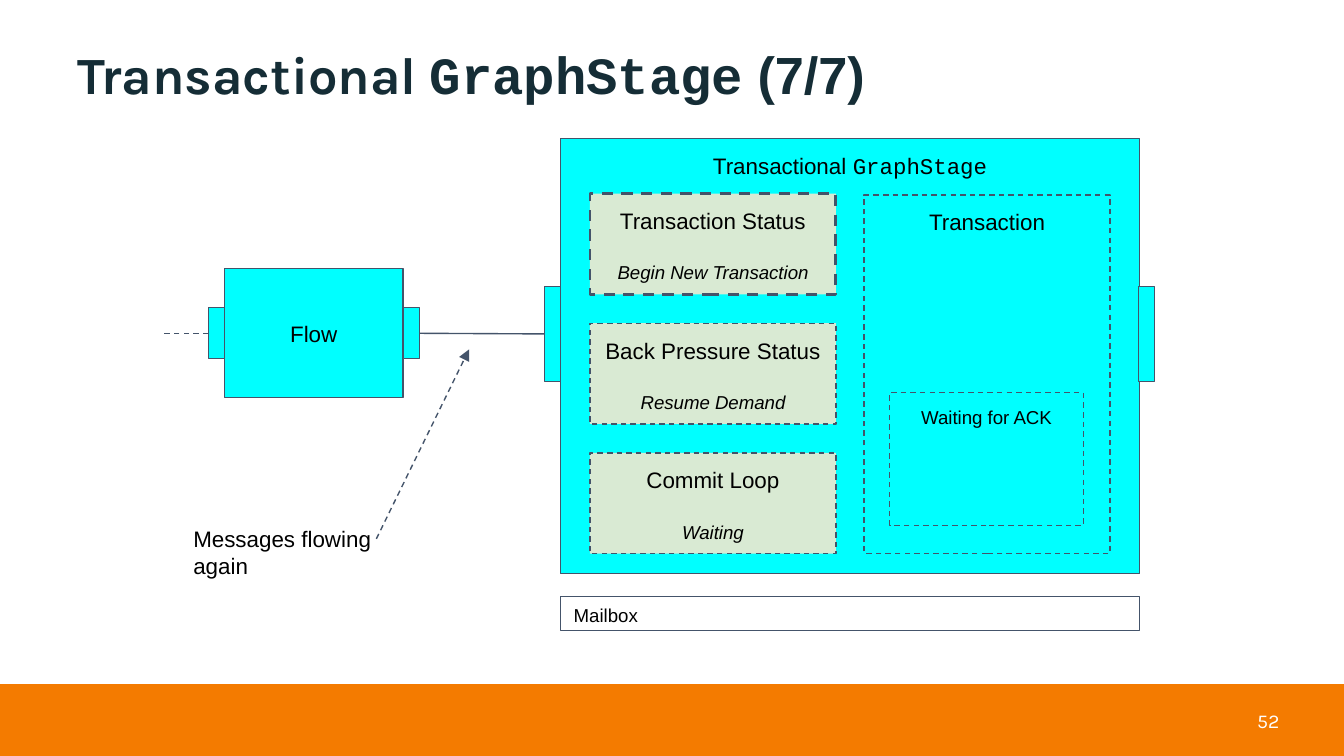
from dataclasses import dataclass

from pptx import Presentation
from pptx.dml.color import RGBColor
from pptx.enum import dml, shapes, text
from pptx.oxml import xmlchemy
from pptx.util import Inches, Pt

PAGE_WIDTH = 10
PAGE_HEIGHT = PAGE_WIDTH * 9 / 16


@dataclass(frozen=True)
class Theme:
    ink: RGBColor = RGBColor(0, 0, 0)
    title: RGBColor = RGBColor(0x15, 0x2D, 0x36)
    outline: RGBColor = RGBColor(0x44, 0x54, 0x6A)
    stage: RGBColor = RGBColor(0, 0xFF, 0xFF)
    status: RGBColor = RGBColor(0xD9, 0xEA, 0xD3)
    footer: RGBColor = RGBColor(0xF4, 0x7B, 0)
    white: RGBColor = RGBColor(0xFF, 0xFF, 0xFF)
    sans: str = "Arial"
    mono: str = "Courier New"
    display: str = "Karla"
    title_size: float = 28
    label_size: float = 12
    detail_size: float = 10
    number_size: float = 10.5
    thin: float = 0.75
    thick: float = 1.5


THEME = Theme()
CENTER = text.PP_ALIGN.CENTER
LEFT = text.PP_ALIGN.LEFT
TOP = text.MSO_ANCHOR.TOP
MIDDLE = text.MSO_ANCHOR.MIDDLE


def set_frame(box, anchor=TOP, inset=0.1):
    frame = box.text_frame
    frame.word_wrap = True
    frame.auto_size = text.MSO_AUTO_SIZE.NONE
    frame.vertical_anchor = anchor
    frame.margin_left = frame.margin_right = Inches(inset)
    frame.margin_top = frame.margin_bottom = Inches(inset)
    return frame


def write(para, content, size=THEME.label_size, color=THEME.ink,
          font=THEME.sans, align=LEFT):
    """Fill a paragraph from a string or from (string, font) pairs."""
    spans = [(content, None)] if isinstance(content, str) else content
    para.alignment = align
    para.font.size = Pt(size)
    para.font.color.rgb = color
    para.font.name = font
    for words, face in spans:
        span = para.add_run()
        span.text = words
        if face:
            span.font.name = face


def style_line(line, width=THEME.thin, dashed=False):
    line.color.rgb = THEME.outline
    line.width = Pt(width)
    if dashed:
        line.dash_style = dml.MSO_LINE.DASH


def add_box(page, area, fill=None, outlined=True, dashed=False,
            width=THEME.thin):
    box = page.shapes.add_shape(shapes.MSO_SHAPE.RECTANGLE,
                                *map(Inches, area))
    box.shadow.inherit = False
    if fill is None:
        box.fill.background()
    else:
        box.fill.solid()
        box.fill.fore_color.rgb = fill
    if outlined:
        style_line(box.line, width, dashed)
    else:
        box.line.fill.background()
    return box


def add_labelled_box(page, area, label, fill=None, dashed=False, anchor=TOP,
                     size=THEME.label_size, width=THEME.thin):
    box = add_box(page, area, fill, dashed=dashed, width=width)
    write(set_frame(box, anchor).paragraphs[0], label, size, align=CENTER)
    return box


def add_status(page, area, name, state, width):
    box = add_labelled_box(page, area, name, THEME.status, True, width=width)
    para = box.text_frame.add_paragraph()
    write(para, state, THEME.detail_size, align=CENTER)
    para.font.italic = True
    para.space_before = Pt(14.5)


def add_text(page, area, content, anchor=TOP, inset=0.1, **style):
    box = page.shapes.add_textbox(*map(Inches, area))
    write(set_frame(box, anchor, inset).paragraphs[0], content, **style)


def add_line(page, start, end, dashed=False, arrow=False):
    line = page.shapes.add_connector(shapes.MSO_CONNECTOR.STRAIGHT,
                                     *map(Inches, start + end))
    style_line(line.line, dashed=dashed)
    properties = line._element.spPr
    if arrow:
        head = xmlchemy.OxmlElement("a:tailEnd")
        head.set("type", "triangle")
        properties.get_or_add_ln().append(head)
    properties.append(xmlchemy.OxmlElement("a:effectLst"))
    return line


def add_title(page):
    title = page.shapes.title
    title.left, title.top = Inches(0.48), Inches(0.25)
    title.width, title.height = Inches(9.04), Inches(0.65)
    para = set_frame(title, MIDDLE).paragraphs[0]
    write(para, [("Transactional ", None), ("GraphStage", THEME.mono),
                 (" (7/7)", THEME.sans)],
          THEME.title_size, THEME.title, THEME.display)
    para.font.bold = True
    para.line_spacing = 0.9


def add_footer(page):
    top = 5.09
    add_box(page, (0, top, PAGE_WIDTH, PAGE_HEIGHT - top), THEME.footer,
            outlined=False)
    add_text(page, (7.27, 5.21, 2.25, 0.3), "52", MIDDLE, 0,
             size=THEME.number_size, color=THEME.white, font=THEME.display,
             align=text.PP_ALIGN.RIGHT)


def add_stage(page):
    """Draw the transactional stage and return its inlet."""
    add_labelled_box(page, (4.17, 1.03, 4.31, 3.24),
                     [("Transactional ", None), ("GraphStage", THEME.mono)],
                     THEME.stage)
    inlet, _ = [add_box(page, (left, 2.13, 0.12, 0.71), THEME.stage)
                for left in (4.05, 8.47)]
    add_labelled_box(page, (6.43, 1.45, 1.83, 2.67), "Transaction",
                     dashed=True)
    add_labelled_box(page, (6.62, 2.92, 1.44, 0.99), "Waiting for ACK",
                     dashed=True, size=THEME.detail_size)

    statuses = [("Transaction Status", "Begin New Transaction", THEME.thick),
                ("Back Pressure Status", "Resume Demand", THEME.thin),
                ("Commit Loop", "Waiting", THEME.thin)]
    first, last = 1.44, 3.37
    pitch = (last - first) / (len(statuses) - 1)
    for row, (name, state, width) in enumerate(statuses):
        add_status(page, (4.39, first + row * pitch, 1.83, 0.75),
                   name, state, width)

    add_box(page, (4.17, 4.44, 4.31, 0.25), THEME.white)
    add_text(page, (4.17, 4.39, 0.85, 0.38), "Mailbox",
             size=THEME.detail_size)
    return inlet


def add_flow(page, stage_inlet):
    add_labelled_box(page, (1.67, 2, 1.33, 0.96), "Flow", THEME.stage,
                     anchor=MIDDLE)
    inlet, outlet = [add_box(page, (left, 2.29, 0.12, 0.38), THEME.stage)
                     for left in (1.55, 3)]
    link = add_line(page, (3.12, 2.48), (4.05, 2.48))
    link.begin_connect(outlet, 3)
    link.end_connect(stage_inlet, 1)
    upstream = add_line(page, (1.55, 2.48), (1.2, 2.48), dashed=True)
    upstream.begin_connect(inlet, 1)


def add_callout(page):
    add_text(page, (1.34, 3.81, 1.6, 0.52), "Messages flowing again")
    add_line(page, (2.8, 4.01), (3.49, 2.6), dashed=True, arrow=True)


def main():
    deck = Presentation()
    deck.slide_width = Inches(PAGE_WIDTH)
    deck.slide_height = Inches(PAGE_HEIGHT)
    page = deck.slides.add_slide(deck.slide_layouts[5])
    add_title(page)
    add_footer(page)
    stage_inlet = add_stage(page)
    add_flow(page, stage_inlet)
    add_callout(page)
    deck.save("out.pptx")


if __name__ == "__main__":
    main()
